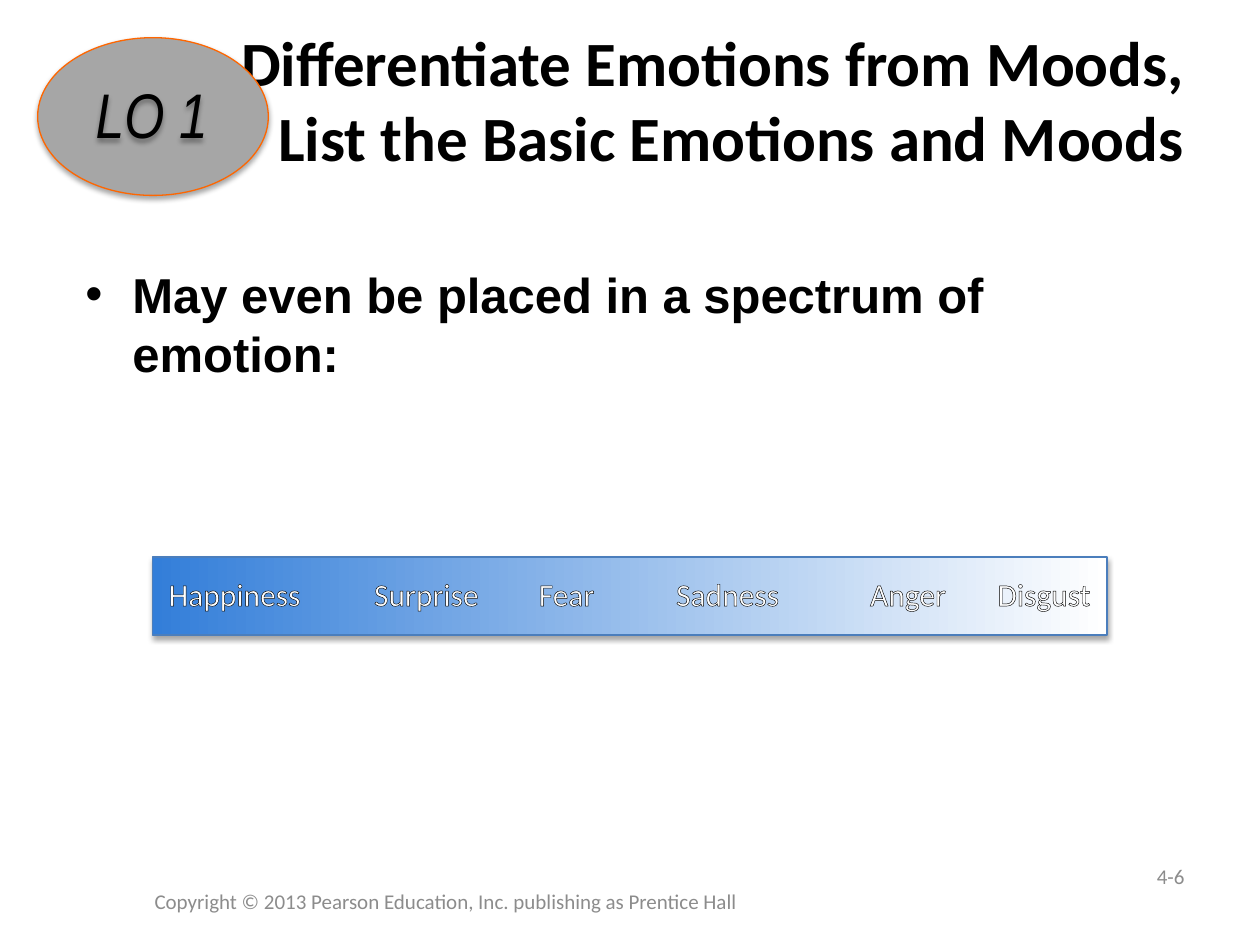
from lxml import etree
from pptx import Presentation
from pptx import util as u
from pptx.dml.color import RGBColor
from pptx.enum import shapes, text
from pptx.oxml import parse_xml
from pptx.oxml.ns import nsdecls, qn

LEFT, CENTER, RIGHT = text.PP_ALIGN.LEFT, text.PP_ALIGN.CENTER, text.PP_ALIGN.RIGHT
TOP, MIDDLE = text.MSO_ANCHOR.TOP, text.MSO_ANCHOR.MIDDLE


def color(value):
    """Turn a hex string into a colour."""
    return RGBColor.from_string(value)


def add_bullet(para, indent):
    """Give a paragraph a hanging bullet."""
    props = para._p.get_or_add_pPr()
    props.set("marL", str(u.Cm(indent)))
    props.set("indent", str(-u.Cm(indent)))
    etree.SubElement(props, qn("a:buFont")).set("typeface", "Arial")
    etree.SubElement(props, qn("a:buChar")).set("char", "•")


def add_outline(span, value):
    """Draw a thin line around the letters of a span."""
    span._r.get_or_add_rPr().insert(0, parse_xml(
        f'<a:ln {nsdecls("a")} w="9525"><a:solidFill>'
        f'<a:srgbClr val="{value}"/></a:solidFill></a:ln>'))


def add_shadow(shape):
    """Cast a soft shadow straight down."""
    shape.shadow.inherit = False
    effects = shape._element.spPr.find(qn("a:effectLst"))
    effects.append(parse_xml(
        f'<a:outerShdw {nsdecls("a")} blurRad="39370" dist="22860" dir="5400000" '
        'rotWithShape="0"><a:srgbClr val="000000"><a:alpha val="35000"/>'
        '</a:srgbClr></a:outerShdw>'))


def add_text(page, box, words, size, font="Calibri", fill="000000", bold=False,
             italic=False, align=LEFT, anchor=TOP, bullet=None, outline=None):
    """Place a formatted text box."""
    shape = page.shapes.add_textbox(*map(u.Cm, box))
    frame = shape.text_frame
    frame.word_wrap = True
    frame.vertical_anchor = anchor
    para = frame.paragraphs[0]
    para.text = words
    para.alignment = align
    if bullet:
        add_bullet(para, bullet)
    for span in para.runs:
        span.font.name, span.font.size = font, u.Pt(size)
        span.font.bold, span.font.italic = bold, italic
        span.font.color.rgb = color(fill)
        if outline:
            add_outline(span, outline)
    return shape


def add_panel(page, kind, box, line):
    """Place a shadowed shape with a thin line."""
    shape = page.shapes.add_shape(kind, *map(u.Cm, box))
    shape.line.color.rgb = color(line)
    shape.line.width = u.Pt(0.75)
    add_shadow(shape)
    return shape


def add_objective(page, box):
    """Draw the learning objective badge."""
    left, top, width, height = box
    badge = add_panel(page, shapes.MSO_SHAPE.OVAL, box, "FF6600")
    badge.fill.solid()
    badge.fill.fore_color.rgb = color("A6A6A6")
    label = add_text(page, (left + 0.71, top + 0.64, 3.18, 1.8), "LO 1", 36,
                     font="Arial Narrow", italic=True, align=CENTER)
    add_shadow(label)


def add_spectrum(page, box):
    """Draw the gradient bar with its emotions."""
    left, top, width, height = box
    bar = add_panel(page, shapes.MSO_SHAPE.RECTANGLE, box, "4B7EBC")
    bar.fill.gradient()
    bar.fill.gradient_angle = 0
    for stop, value in zip(bar.fill.gradient_stops, ("337ED9", "FFFFFF")):
        stop.color.rgb = color(value)
    emotions = {"Happiness": 0.08, "Surprise": 4.22, "Fear": 7.54,
                "Sadness": 10.31, "Anger": 14.22, "Disgust": 16.79}
    for emotion, offset in emotions.items():
        add_text(page, (left + offset, top + 0.23, 3.91, 1.02), emotion, 18,
                 fill="FFFFFF", outline="000000")


def add_footer(page, box):
    """Place the copyright line and the page number."""
    left, top, width, height = box
    add_text(page, (left, top + 0.5, 15.44, height), "Copyright © 2013 Pearson "
             "Education, Inc. publishing as Prentice Hall", 12, fill="8C8C8C",
             align=CENTER, anchor=MIDDLE)
    add_text(page, (left + width - 1.7, top, 1.7, height), "4-6", 12,
             fill="8C8C8C", align=RIGHT, anchor=MIDDLE)


def main():
    """Build and save the deck."""
    deck = Presentation()
    deck.slide_width, deck.slide_height = u.Cm(25.4), u.Cm(19.05)
    page = deck.slides.add_slide(deck.slide_layouts[6])
    add_text(page, (1.27, 0, 22.86, 3.99), "Differentiate Emotions from Moods,\v"
             "List the Basic Emotions and Moods", 36, bold=True, align=RIGHT,
             anchor=MIDDLE)
    add_text(page, (1.47, 5.21, 22.86, 3.33),
             "May even be placed in a spectrum of emotion:", 28, font="Arial",
             bold=True, bullet=0.95)
    add_footer(page, (1.27, 17.15, 22.86, 1.02))
    add_objective(page, (0.76, 0.76, 4.65, 3.18))
    add_spectrum(page, (3.07, 11.23, 19.25, 1.57))
    deck.save("out.pptx")


if __name__ == "__main__":
    main()
